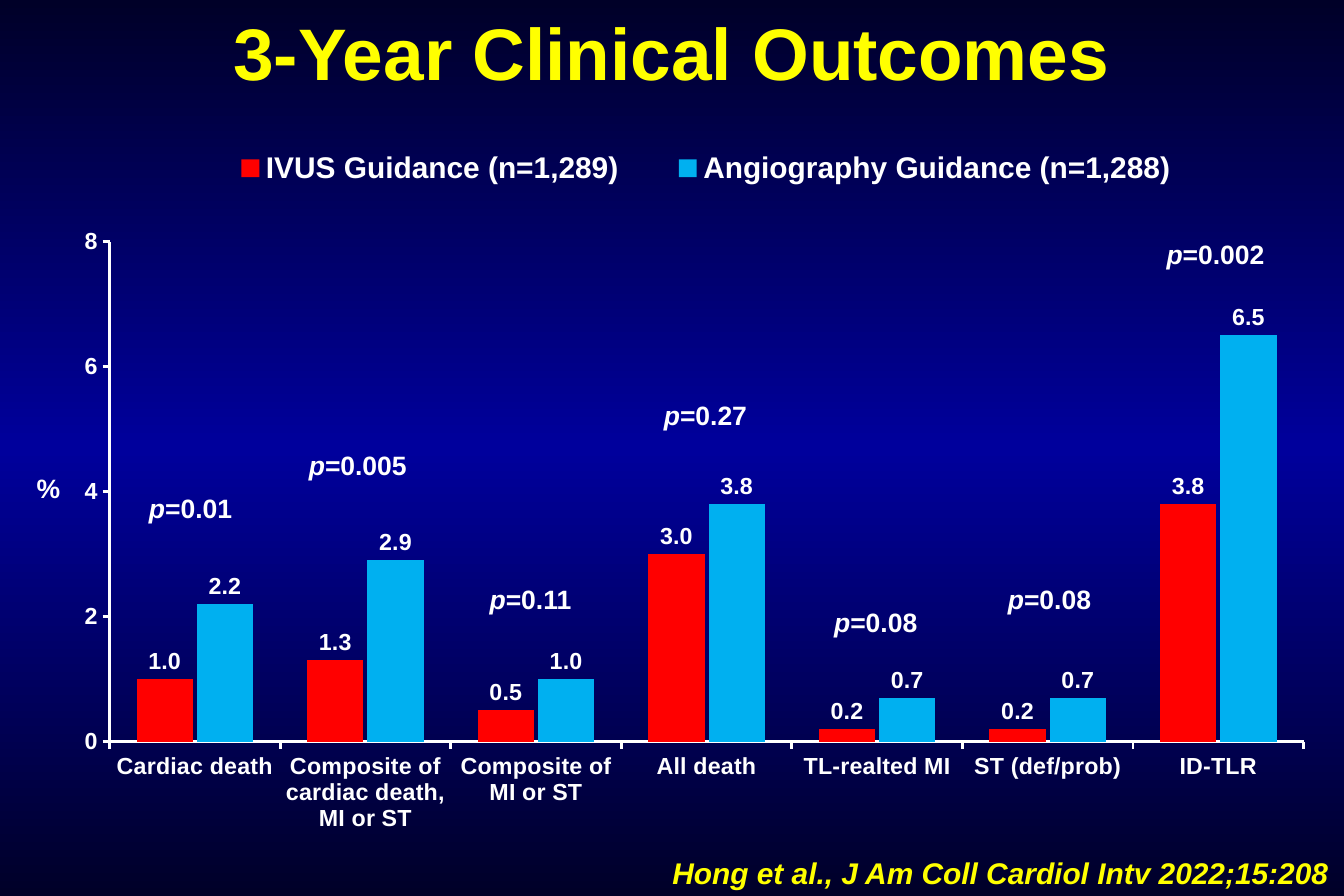
from copy import deepcopy

from pptx import Presentation
from pptx.chart.data import CategoryChartData
from pptx.dml.color import RGBColor
from pptx.enum.chart import (XL_CHART_TYPE, XL_LABEL_POSITION,
                             XL_LEGEND_POSITION, XL_TICK_MARK)
from pptx.enum.text import MSO_ANCHOR, MSO_AUTO_SIZE, PP_ALIGN
from pptx.oxml import parse_xml
from pptx.oxml.ns import nsdecls
from pptx.util import Inches, Pt

WIDE, HIGH = Inches(11.25), Inches(7.5)
WHITE, GOLD = "FFFFFF", "FFFF00"
NAVY, BLUE = "000028", "00009C"

ARMS = [
    ("IVUS Guidance (n=1,289)", "FF0000", (1, 1.3, 0.5, 3, 0.2, 0.2, 3.8)),
    ("Angiography Guidance (n=1,288)", "00B0F0",
     (2.2, 2.9, 1, 3.8, 0.7, 0.7, 6.5)),
]
EVENTS = [
    ("Cardiac death", "0.01", 14.18, 54.27),
    ("Composite of cardiac death, MI or ST", "0.005", 26.62, 49.47),
    ("Composite of MI or ST", "0.11", 39.47, 64.4),
    ("All death", "0.27", 52.49, 43.87),
    ("TL-realted MI", "0.08", 65.16, 66.93),
    ("ST (def/prob)", "0.08", 78.09, 64.4),
    ("ID-TLR", "0.002", 90.44, 25.87),
]


def area(left, top, width, height):
    return (int(WIDE * left / 100), int(HIGH * top / 100),
            int(WIDE * width / 100), int(HIGH * height / 100))


def tint(code):
    return RGBColor.from_string(code)


def style(font, size, code=WHITE):
    font.name, font.size, font.bold = "Arial", Pt(size), True
    font.color.rgb = tint(code)


def paint(slide):
    fill = slide.background.fill
    fill.gradient()
    fill.gradient_angle = 270
    stops = slide.element.xpath(".//a:gsLst")[0]
    stops.append(deepcopy(stops[0]))
    marks = zip(fill.gradient_stops, (0, 0.5, 1), (NAVY, BLUE, NAVY))
    for stop, spot, code in marks:
        stop.position = spot
        stop.color.rgb = tint(code)


def head(slide, text):
    title = slide.shapes.title
    title.left, title.top, title.width, title.height = area(0, 0.13, 100, 11.2)
    frame = title.text_frame
    frame.auto_size = MSO_AUTO_SIZE.NONE
    frame.vertical_anchor = MSO_ANCHOR.MIDDLE
    frame.text = text
    para = frame.paragraphs[0]
    para.alignment = PP_ALIGN.CENTER
    style(para.font, 44, GOLD)


def label(slide, box, runs, size=16, code=WHITE, align=PP_ALIGN.CENTER):
    frame = slide.shapes.add_textbox(*area(*box)).text_frame
    para = frame.paragraphs[0]
    para.alignment = align
    style(para.font, size, code)
    for text, slant in runs:
        run = para.add_run()
        run.text = text
        run.font.italic = slant


def layout(node, index, box, inner=False):
    for old in node.xpath("c:layout"):
        node.remove(old)
    target = '<c:layoutTarget val="inner"/>' if inner else ""
    modes = "".join(f'<c:{side}Mode val="edge"/>' for side in "xy")
    sizes = "".join(f'<c:{side} val="{part}"/>'
                    for side, part in zip("xywh", box))
    node.insert(index, parse_xml(
        f'<c:layout {nsdecls("c")}><c:manualLayout>{target}{modes}{sizes}'
        '</c:manualLayout></c:layout>'))


def trim(axis):
    axis.has_major_gridlines = False
    axis.major_tick_mark = XL_TICK_MARK.OUTSIDE
    axis.minor_tick_mark = XL_TICK_MARK.NONE
    axis.format.line.color.rgb = tint(WHITE)
    axis.format.line.width = Pt(1.75)
    style(axis.tick_labels.font, 14)


def graph(slide):
    data = CategoryChartData()
    data.categories = [event[0] for event in EVENTS]
    for name, _, values in ARMS:
        data.add_series(name, values)
    chart = slide.shapes.add_chart(
        XL_CHART_TYPE.COLUMN_CLUSTERED,
        *area(4.89, 14.8, 93.42, 79.6), data).chart
    chart.has_title = False
    style(chart.font, 14)
    root = chart.element
    root.xpath("c:chart")[0].addnext(parse_xml(
        f'<c:spPr {nsdecls("c", "a")}><a:noFill/>'
        '<a:ln><a:noFill/></a:ln></c:spPr>'))

    chart.has_legend = True
    chart.legend.position = XL_LEGEND_POSITION.TOP
    chart.legend.include_in_layout = False
    style(chart.legend.font, 18)
    layout(root.xpath(".//c:legend")[0], 1, (0.1, 0.01, 0.82, 0.08))
    layout(root.xpath(".//c:plotArea")[0], 0,
           (0.035, 0.153, 0.951, 0.701), True)

    trim(chart.category_axis)
    axis = chart.value_axis
    trim(axis)
    axis.minimum_scale, axis.maximum_scale, axis.major_unit = 0, 8, 2

    plot = chart.plots[0]
    plot.gap_width, plot.overlap, plot.vary_by_categories = 96, -7, False
    for bars, (_, code, _) in zip(plot.series, ARMS):
        bars.format.fill.solid()
        bars.format.fill.fore_color.rgb = tint(code)
        tags = bars.data_labels
        tags.show_value = True
        tags.number_format = "#,##0.0"
        tags.number_format_is_linked = False
        tags.position = XL_LABEL_POSITION.OUTSIDE_END
        style(tags.font, 14)


def main():
    deck = Presentation()
    deck.slide_width, deck.slide_height = WIDE, HIGH
    slide = deck.slides.add_slide(deck.slide_layouts[5])
    paint(slide)
    head(slide, "3-Year Clinical Outcomes")
    label(slide, (49.16, 94.67, 50.84, 5.33),
          [("Hong et al., J Am Coll Cardiol Intv 2022;15:208", True)],
          18, GOLD, PP_ALIGN.LEFT)
    graph(slide)
    label(slide, (1.78, 52, 3.64, 4.93), [("%", False)])
    for _, value, middle, top in EVENTS:
        label(slide, (middle - 4.93, top, 9.86, 4.93),
              [("p", True), (f"={value}", False)])
    deck.save("out.pptx")


if __name__ == "__main__":
    main()
